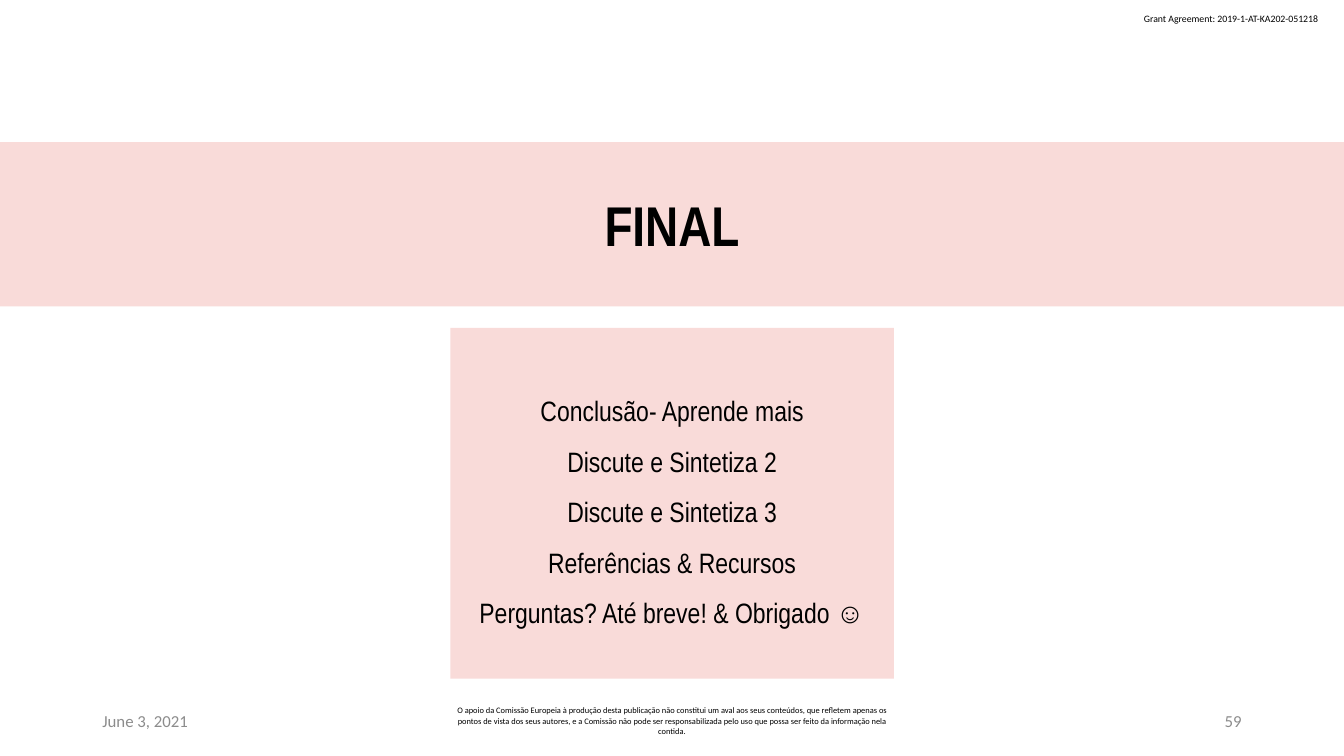
from pptx import Presentation
from pptx.dml.color import RGBColor
from pptx.enum.shapes import MSO_SHAPE
from pptx.enum.text import MSO_ANCHOR, MSO_AUTO_SIZE, PP_ALIGN
from pptx.util import Cm, Pt

SLIDE_WIDTH, SLIDE_HEIGHT = 33.87, 19.05
PINK, BLACK, GREY = "F9DBD9", "000000", "8C8C8C"
TOPICS = [
    "Conclusão- Aprende mais",
    "Discute e Sintetiza 2",
    "Discute e Sintetiza 3",
    "Referências & Recursos",
    "Perguntas? Até breve! & Obrigado ☺",
]
DISCLAIMER = (
    "O apoio da Comissão Europeia à produção desta publicação não constitui um aval "
    "aos seus conteúdos, que refletem apenas os pontos de vista dos seus autores, e a "
    "Comissão não pode ser responsabilizada pelo uso que possa ser feito da informação "
    "nela contida."
)
PANEL_FRAME = {
    "margin_left": Cm(0.33), "margin_right": Cm(0.33),
    "margin_top": Cm(0.18), "margin_bottom": Cm(0.18),
}


def color(hex_string):
    return RGBColor.from_string(hex_string)


def set_attributes(target, values):
    for name, value in values.items():
        setattr(target, name, value)


def write(shape, lines, size, font="Calibri", ink=BLACK, bold=False,
          align=PP_ALIGN.LEFT, spacing=1.0, frame=None):
    text_frame = shape.text_frame
    set_attributes(text_frame, {
        "word_wrap": True, "auto_size": MSO_AUTO_SIZE.NONE,
        "vertical_anchor": MSO_ANCHOR.MIDDLE, **(frame or {}),
    })
    text_frame.text = "\n".join(lines)
    for paragraph in text_frame.paragraphs:
        set_attributes(paragraph, {"alignment": align, "line_spacing": spacing})
        set_attributes(paragraph.font, {"name": font, "size": Pt(size), "bold": bold})
        paragraph.font.color.rgb = color(ink)


def fill_panel(shape):
    shape.fill.solid()
    shape.fill.fore_color.rgb = color(PINK)


def add_grant_label(slide, left, top, width, height):
    label = slide.shapes.add_textbox(Cm(left), Cm(top), Cm(width), Cm(height))
    write(label, ["Grant Agreement: 2019-1-AT-KA202-051218"], 7,
          frame={"word_wrap": False, "vertical_anchor": MSO_ANCHOR.TOP})


def add_title_band(slide, left, top, width, height):
    title = slide.shapes.title
    set_attributes(title, {"left": Cm(left), "top": Cm(top),
                           "width": Cm(width), "height": Cm(height)})
    fill_panel(title)
    write(title, ["FINAL"], 40, font="Arial Narrow", bold=True,
          align=PP_ALIGN.CENTER, frame=PANEL_FRAME)


def add_topics_panel(slide, left, top, width, height):
    panel = slide.shapes.add_shape(
        MSO_SHAPE.RECTANGLE, Cm(left), Cm(top), Cm(width), Cm(height))
    panel.shadow.inherit = False
    panel.line.fill.background()
    fill_panel(panel)
    write(panel, TOPICS, 20, font="Arial Narrow", align=PP_ALIGN.CENTER,
          spacing=1.5, frame=PANEL_FRAME)


def add_footer(slide, left, top, width, height):
    side, middle = 7.62, 11.43
    # Text, offset in the footer, width, size, colour, alignment
    parts = [
        ("June 3, 2021", 0, side, 12, GREY, PP_ALIGN.LEFT),
        (DISCLAIMER, (width - middle) / 2, middle, 6, BLACK, PP_ALIGN.CENTER),
        ("59", width - side, side, 12, GREY, PP_ALIGN.RIGHT),
    ]
    for text, offset, part_width, size, ink, align in parts:
        box = slide.shapes.add_textbox(
            Cm(left + offset), Cm(top), Cm(part_width), Cm(height))
        write(box, [text], size, ink=ink, align=align)


def main():
    presentation = Presentation()
    presentation.slide_width = Cm(SLIDE_WIDTH)
    presentation.slide_height = Cm(SLIDE_HEIGHT)
    slide = presentation.slides.add_slide(presentation.slide_layouts[5])

    # Header
    add_grant_label(slide, 28.58, 0.2, 5, 0.56)
    # Title and topics
    add_title_band(slide, 0, 3.58, SLIDE_WIDTH, 4.14)
    add_topics_panel(slide, 11.35, 8.26, 11.18, 8.84)
    # Date, disclaimer and page number
    add_footer(slide, 2.33, 17.65, 29.21, 1.02)

    presentation.save("out.pptx")


if __name__ == "__main__":
    main()
